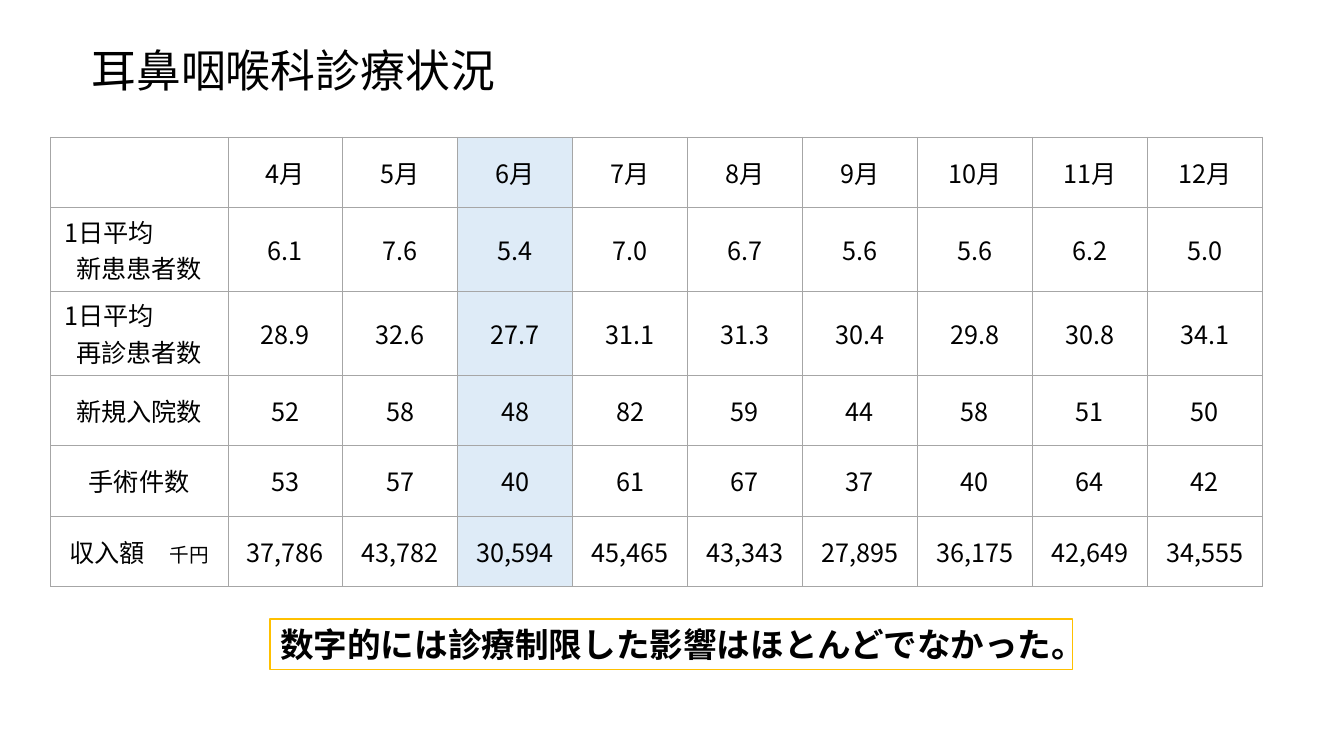
from lxml.etree import SubElement
from pptx import Presentation
from pptx.dml.color import RGBColor
from pptx.enum.shapes import MSO_SHAPE
from pptx.enum.text import MSO_ANCHOR, MSO_AUTO_SIZE, PP_ALIGN
from pptx.oxml.ns import qn
from pptx.util import Inches, Pt

FONT = "Noto Sans CJK JP"
COLORS = {"text": "000000", "paper": "FFFFFF", "grid": "A6A6A6",
          "highlight": "DEEBF7", "frame": "FFC000"}
MONTHS = range(4, 13)
HIGHLIGHT_MONTH = 6
LABEL_WIDTH, MONTH_WIDTH = 1.76, 1.14
ROW_HEIGHT, TWO_LINE_HEIGHT = 0.7, 0.83
FIRST_LINE_INDENT = 0.04

# A label is a list of lines; each line is a list of spans
ROWS = [
    ([["1日平均"], ["新患患者数"]], "6.1 7.6 5.4 7.0 6.7 5.6 5.6 6.2 5.0"),
    ([["1日平均"], ["再診患者数"]], "28.9 32.6 27.7 31.1 31.3 30.4 29.8 30.8 34.1"),
    ([["新規入院数"]], "52 58 48 82 59 44 58 51 50"),
    ([["手術件数"]], "53 57 40 61 67 37 40 64 42"),
    ([["収入額　", "千円"]],
     "37,786 43,782 30,594 45,465 43,343 27,895 36,175 42,649 34,555"),
]


def color(name):
    return RGBColor.from_string(COLORS[name])


def add_span(para, text, size, bold=False):
    span = para.add_run()
    span.text = text
    span.font.size = Pt(size)
    span.font.bold = bold
    span.font.name = FONT
    span.font.color.rgb = color("text")
    # East Asian typeface
    SubElement(span.font._element, qn("a:ea"), typeface=FONT)


def add_title(page, left, top, width, height):
    box = page.shapes.add_textbox(*map(Inches, (left, top, width, height)))
    frame = box.text_frame
    frame.word_wrap = True
    frame.vertical_anchor = MSO_ANCHOR.MIDDLE
    para = frame.paragraphs[0]
    para.line_spacing = 0.9
    add_span(para, "耳鼻咽喉科診療状況", 32)


def add_borders(cell):
    properties = cell._tc.get_or_add_tcPr()
    for index, side in enumerate(("lnL", "lnR", "lnT", "lnB")):
        line = properties.makeelement(qn(f"a:{side}"), {"w": str(Pt(0.5))})
        fill = SubElement(line, qn("a:solidFill"))
        SubElement(fill, qn("a:srgbClr"), val=COLORS["grid"])
        properties.insert(index, line)


def fill_cell(cell, lines, fill):
    cell.fill.solid()
    cell.fill.fore_color.rgb = color(fill)
    cell.vertical_anchor = MSO_ANCHOR.MIDDLE
    add_borders(cell)
    frame = cell.text_frame
    for number, spans in enumerate(lines):
        para = frame.add_paragraph() if number else frame.paragraphs[0]
        if number == len(lines) - 1:
            para.alignment = PP_ALIGN.CENTER
        else:
            para.alignment = PP_ALIGN.LEFT
            para._p.get_or_add_pPr().set("marL", str(Inches(FIRST_LINE_INDENT)))
        for position, text in enumerate(spans):
            add_span(para, text, 14 if position else 18)


def add_monthly_table(page, left, top):
    grid = [[[]] + [[[f"{month}月"]] for month in MONTHS]]
    grid += [[label] + [[[value]] for value in values.split()]
             for label, values in ROWS]
    heights = [TWO_LINE_HEIGHT if len(row[0]) > 1 else ROW_HEIGHT for row in grid]
    width = LABEL_WIDTH + MONTH_WIDTH * len(MONTHS)
    table = page.shapes.add_table(
        len(grid), len(grid[0]), Inches(left), Inches(top),
        Inches(width), Inches(sum(heights))).table
    table.first_row = table.horz_banding = False
    for index, column in enumerate(table.columns):
        column.width = Inches(MONTH_WIDTH if index else LABEL_WIDTH)
    highlighted = MONTHS.index(HIGHLIGHT_MONTH) + 1
    for row_index, row in enumerate(grid):
        table.rows[row_index].height = Inches(heights[row_index])
        for index, lines in enumerate(row):
            fill = "highlight" if index == highlighted else "paper"
            fill_cell(table.cell(row_index, index), lines, fill)


def add_conclusion(page, left, top, width, height):
    box = page.shapes.add_shape(
        MSO_SHAPE.RECTANGLE, *map(Inches, (left, top, width, height)))
    box.shadow.inherit = False
    box.fill.solid()
    box.fill.fore_color.rgb = color("paper")
    box.line.color.rgb = color("frame")
    box.line.width = Pt(1)
    frame = box.text_frame
    frame.word_wrap = True
    frame.auto_size = MSO_AUTO_SIZE.SHAPE_TO_FIT_TEXT
    frame.vertical_anchor = MSO_ANCHOR.TOP
    para = frame.paragraphs[0]
    para.alignment = PP_ALIGN.LEFT
    add_span(para, "数字的には診療制限した影響はほとんどでなかった。", 24, bold=True)


def main():
    deck = Presentation()
    deck.slide_width, deck.slide_height = Inches(13.33), Inches(7.5)
    page = deck.slides.add_slide(deck.slide_layouts[6])
    add_title(page, 0.81, 0, 11.5, 1.45)
    add_monthly_table(page, 0.5, 1.36)
    add_conclusion(page, 2.68, 6.14, 7.96, 0.5)
    deck.save("out.pptx")


if __name__ == "__main__":
    main()
